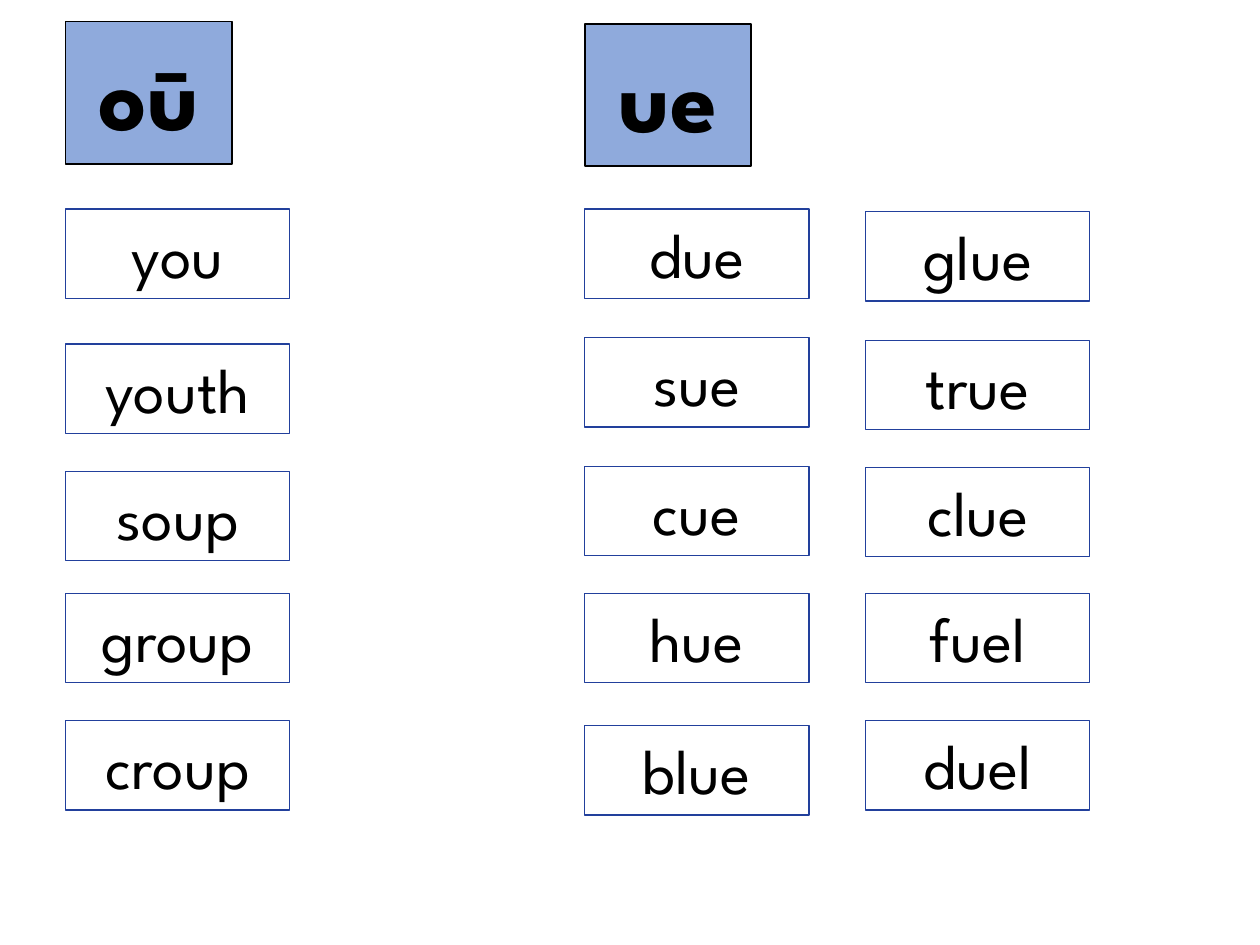
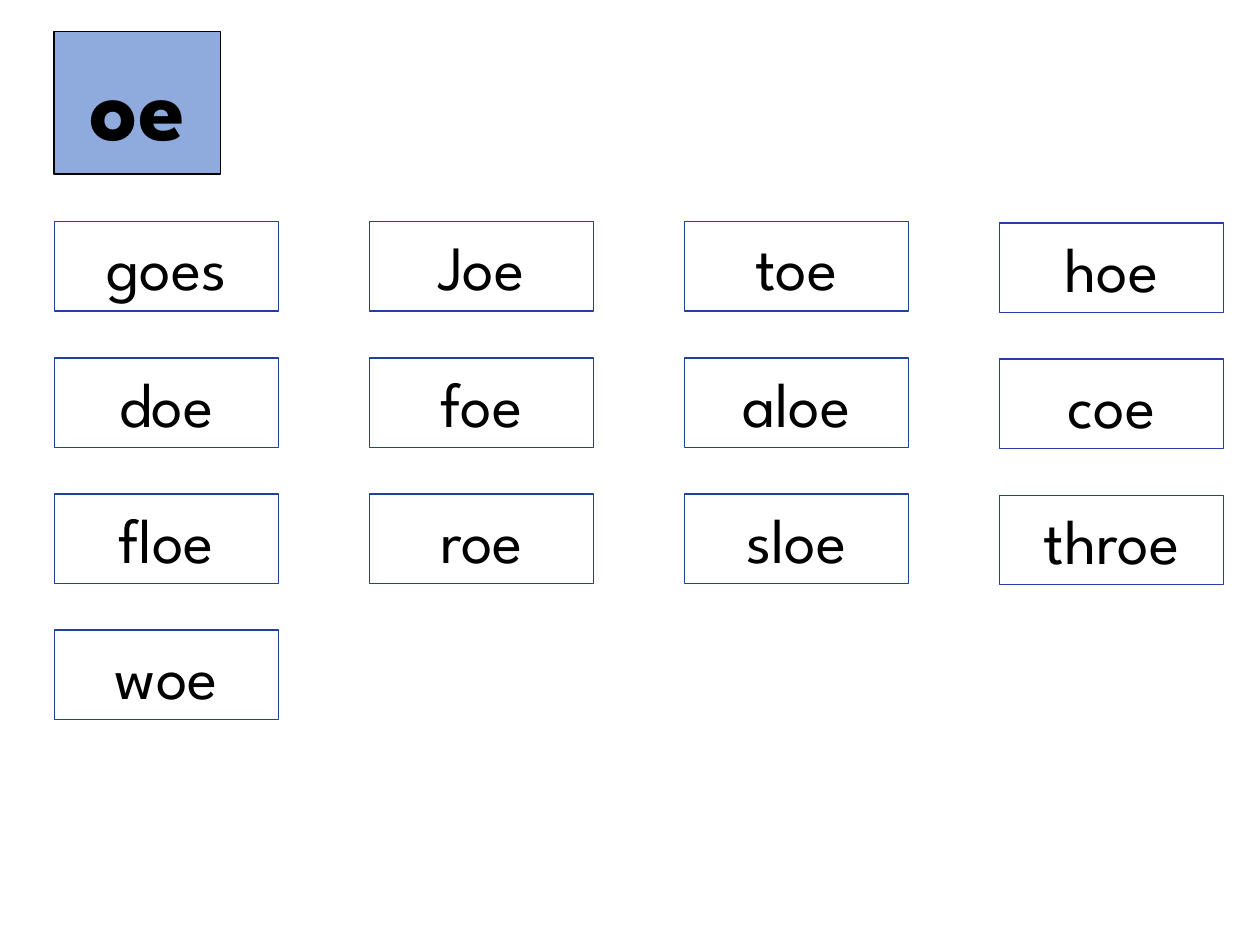
"""Build two slides of word cards sorted by vowel spelling."""
from pptx import Presentation
from pptx.dml.color import RGBColor
from pptx.enum.shapes import MSO_SHAPE
from pptx.enum.text import MSO_ANCHOR, MSO_AUTO_SIZE, PP_ALIGN
from pptx.util import Inches, Pt

RECT = MSO_SHAPE.RECTANGLE
TOP, MIDDLE = MSO_ANCHOR.TOP, MSO_ANCHOR.MIDDLE
FIXED, GROW = MSO_AUTO_SIZE.NONE, MSO_AUTO_SIZE.SHAPE_TO_FIT_TEXT
CENTER = PP_ALIGN.CENTER

FONT = "League Spartan"
BLACK = RGBColor(0x00, 0x00, 0x00)
BLUE = RGBColor(0x8F, 0xAA, 0xDC)
NAVY = RGBColor(0x22, 0x40, 0x9C)

TILE = (1.32, 1.13)
CARD = (1.78, 0.71)
STEP = 1.08


def spread(top, count):
    return [top + STEP * row for row in range(count)]


SLIDES = [
    {
        "tiles": [("oū", 0.52, 0.17), ("ue", 4.64, 0.19)],
        "columns": [
            (0.52, [1.66, 2.73, 3.74, 4.71, 5.72],
             ["you", "youth", "soup", "group", "croup"]),
            (4.64, [1.66, 2.68, 3.7, 4.71, 5.76],
             ["due", "sue", "cue", "hue", "blue"]),
            (6.87, [1.68, 2.7, 3.71, 4.71, 5.72],
             ["glue", "true", "clue", "fuel", "duel"]),
        ],
    },
    {
        "tiles": [("oe", 0.43, 0.25)],
        "columns": [
            (0.43, spread(1.76, 4), ["goes", "doe", "floe", "woe"]),
            (2.93, spread(1.76, 3), ["Joe", "foe", "roe"]),
            (5.43, spread(1.76, 3), ["toe", "aloe", "sloe"]),
            (7.93, spread(1.77, 3), ["hoe", "coe", "throe"]),
        ],
    },
]


def add_box(slide, text, left, top, size, line, width, points):
    box = slide.shapes.add_shape(RECT, *map(Inches, (left, top, *size)))
    box.shadow.inherit = False
    box.fill.background()
    box.line.color.rgb = line
    box.line.width = Pt(width)
    frame = box.text_frame
    frame.word_wrap = True
    para = frame.paragraphs[0]
    para.alignment = CENTER
    run = para.add_run()
    run.text = text
    run.font.name = FONT
    run.font.size = Pt(points)
    run.font.color.rgb = BLACK
    return box, frame, run


def add_tile(slide, text, left, top):
    box, frame, run = add_box(slide, text, left, top, TILE, BLACK, 1, 54)
    box.fill.solid()
    box.fill.fore_color.rgb = BLUE
    frame.vertical_anchor = MIDDLE
    frame.auto_size = FIXED
    run.font.bold = True


def add_card(slide, text, left, top):
    _, frame, _ = add_box(slide, text, left, top, CARD, NAVY, 0.75, 36)
    frame.vertical_anchor = TOP
    frame.auto_size = GROW


def main():
    deck = Presentation()
    deck.slide_width, deck.slide_height = Inches(10), Inches(7.5)
    for content in SLIDES:
        slide = deck.slides.add_slide(deck.slide_layouts[6])
        for text, left, top in content["tiles"]:
            add_tile(slide, text, left, top)
        for left, tops, words in content["columns"]:
            for top, word in zip(tops, words):
                add_card(slide, word, left, top)
    deck.save("out.pptx")


if __name__ == "__main__":
    main()
